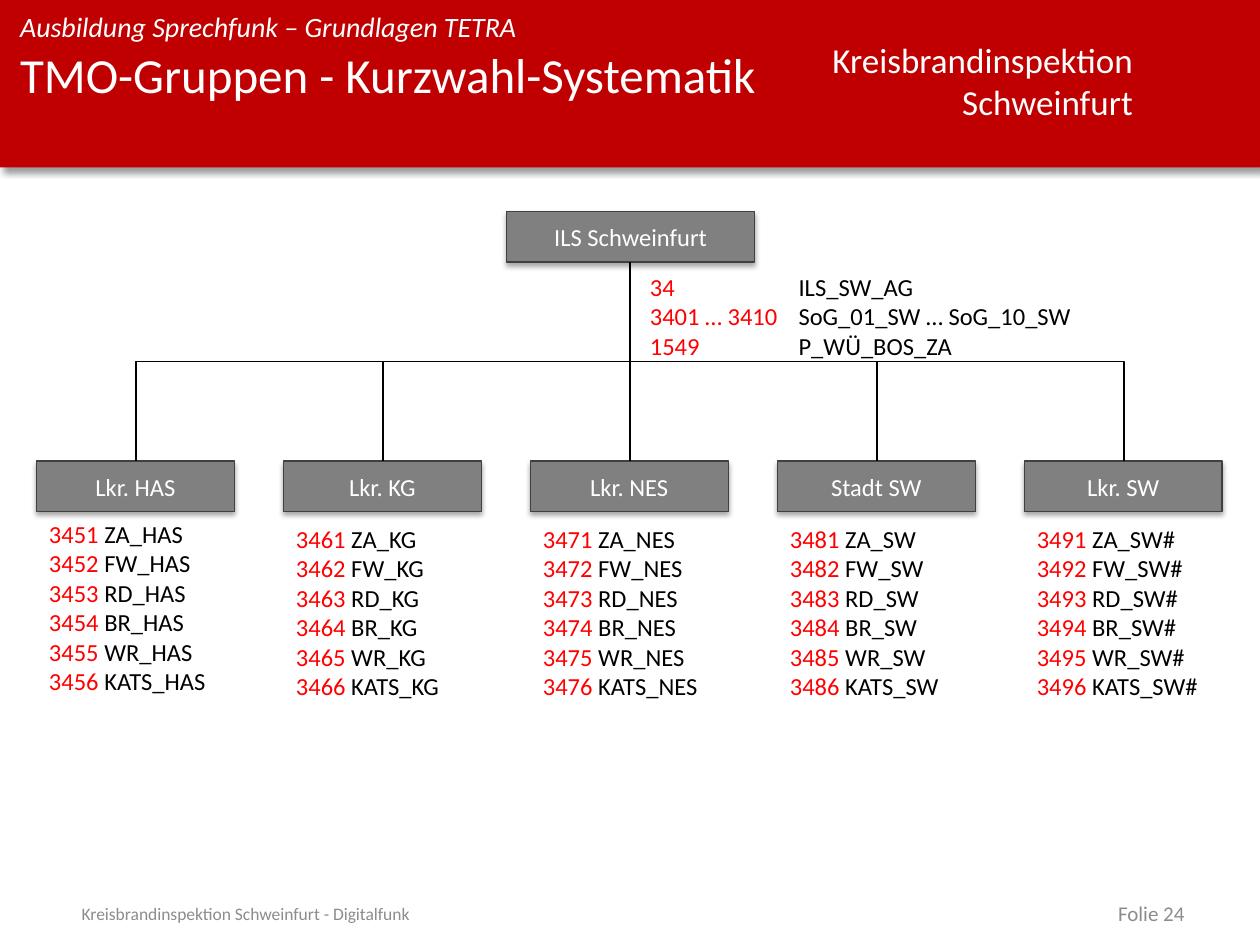
from lxml import etree
from pptx import Presentation
from pptx.dml.color import RGBColor
from pptx.enum.shapes import MSO_CONNECTOR, MSO_SHAPE
from pptx.enum.text import MSO_ANCHOR, MSO_AUTO_SIZE, PP_ALIGN
from pptx.oxml.ns import qn
from pptx.util import Inches, Pt

RED_BAND = RGBColor(0xC0, 0x00, 0x00)
RED = RGBColor(0xFF, 0x00, 0x00)
WHITE = RGBColor(0xFF, 0xFF, 0xFF)
BLACK = RGBColor(0x00, 0x00, 0x00)
BOX_GRAY = RGBColor(0x80, 0x80, 0x80)
EDGE_GRAY = RGBColor(0x40, 0x40, 0x40)
FOOTER_GRAY = RGBColor(0x8C, 0x8C, 0x8C)
LEFT, CENTER, RIGHT = PP_ALIGN.LEFT, PP_ALIGN.CENTER, PP_ALIGN.RIGHT
TOP, MIDDLE = MSO_ANCHOR.TOP, MSO_ANCHOR.MIDDLE
FIT = MSO_AUTO_SIZE.SHAPE_TO_FIT_TEXT
RECTANGLE = MSO_SHAPE.RECTANGLE
ELBOW = MSO_CONNECTOR.ELBOW

prs = Presentation()
prs.slide_width, prs.slide_height = Inches(10), Inches(7.5)
slide = prs.slides.add_slide(prs.slide_layouts[6])


def write(lines, at=None, shape=None, size=14, color=WHITE, align=LEFT, anchor=TOP,
          wrap=True, italic=False, inset=None, tab=None):
    if shape is None:
        shape = slide.shapes.add_textbox(*map(Inches, at))
    frame = shape.text_frame
    frame.word_wrap = wrap
    frame.vertical_anchor = anchor
    if not wrap:
        frame.auto_size = FIT
    if inset is not None:
        frame.margin_left = frame.margin_right = Inches(inset)
        frame.margin_top = frame.margin_bottom = Inches(inset)
    for i, line in enumerate(lines):
        paragraph = frame.paragraphs[0] if i == 0 else frame.add_paragraph()
        paragraph.alignment = align
        if tab:
            tabs = etree.SubElement(paragraph._p.get_or_add_pPr(), qn("a:tabLst"))
            etree.SubElement(tabs, qn("a:tab"), pos=str(Inches(tab)), algn="l")
        for text, run_color in [(line, color)] if isinstance(line, str) else line:
            run = paragraph.add_run()
            run.text = text
            run.font.name = "Calibri"
            run.font.size = Pt(size)
            run.font.italic = italic
            run.font.color.rgb = run_color


def add_box(at, fill, blur, distance, angle, opacity, edge=None):
    box = slide.shapes.add_shape(RECTANGLE, *map(Inches, at))
    box.fill.solid()
    box.fill.fore_color.rgb = fill
    if edge is None:
        box.line.fill.background()
    else:
        box.line.color.rgb = edge
        box.line.width = Pt(0.75)
    box.shadow.inherit = False
    effects = box._element.spPr.find(qn("a:effectLst"))
    shadow = etree.SubElement(effects, qn("a:outerShdw"), blurRad=str(Pt(blur)),
                              dist=str(Pt(distance)), dir=str(angle * 60000),
                              algn="t", rotWithShape="0")
    shade = etree.SubElement(shadow, qn("a:srgbClr"), val="000000")
    etree.SubElement(shade, qn("a:alpha"), val=str(opacity * 1000))
    return box


add_box((0, 0, 10, 1.33), RED_BAND, blur=4, distance=3, angle=45, opacity=40)
write(["Kreisbrandinspektion", "Schweinfurt"], at=(6.48, 0.26, 2.61, 0.77),
      size=20, align=RIGHT, wrap=False)
write(["Ausbildung Sprechfunk – Grundlagen TETRA"], at=(0.16, 0.08, 6.32, 0.27),
      size=16, italic=True, inset=0)
write(["TMO-Gruppen - Kurzwahl-Systematik"], at=(0.16, 0.35, 6.32, 0.99), size=28, inset=0)
write(["Kreisbrandinspektion Schweinfurt - Digitalfunk"], at=(0.55, 7.15, 6.04, 0.2),
      size=10, color=FOOTER_GRAY, anchor=MIDDLE)
write(["Folie 24"], at=(7.17, 7.15, 2.33, 0.2),
      size=12, color=FOOTER_GRAY, align=RIGHT, anchor=MIDDLE)

node_style = dict(fill=BOX_GRAY, blur=3.1, distance=1.8, angle=90, opacity=35, edge=EDGE_GRAY)
control_center = add_box((4.02, 1.68, 1.97, 0.4), **node_style)
write(["ILS Schweinfurt"], shape=control_center, align=CENTER, anchor=MIDDLE)

districts = [
    ("Lkr. HAS", "HAS", 4.07, 1.45),
    ("Lkr. KG", "KG", 4.11, 1.35),
    ("Lkr. NES", "NES", 4.11, 1.45),
    ("Stadt SW", "SW", 4.11, 1.39),
    ("Lkr. SW", "SW#", 4.11, 1.49),
]
services = ["ZA", "FW", "RD", "BR", "WR", "KATS"]
root_x, root_bottom, district_top = 5, 2.08, 3.66
half_drop = (district_top - root_bottom) / 2
middle_y = root_bottom + half_drop

for column, (name, code, list_top, list_width) in enumerate(districts):
    left = 0.29 + 1.96 * column
    district = add_box((left, district_top, 1.57, 0.4), **node_style)
    write([name], shape=district, align=CENTER, anchor=MIDDLE)

    offset = 1.96 * (column - 2)
    side = 1 if offset < 0 else -1
    middle_x = root_x + offset / 2
    half_span = abs(offset) / 2
    branch = slide.shapes.add_connector(
        ELBOW,
        Inches(middle_x + side * half_drop), Inches(middle_y + half_span),
        Inches(middle_x - side * half_drop), Inches(middle_y - half_span))
    branch.line.color.rgb = BLACK
    branch.line.width = Pt(0.75)
    branch_properties = branch._element.spPr
    branch_properties.find(qn("a:xfrm")).set("rot", str((90 if side == 1 else 270) * 60000))
    etree.SubElement(branch_properties, qn("a:effectLst"))

    first_number = 3451 + 10 * column
    write([[(str(first_number + i), RED), (f" {service}_{code}", BLACK)]
           for i, service in enumerate(services)],
          at=(left, list_top, list_width, 1.51), wrap=False)

center_groups = [
    ("34", "ILS_SW_AG"),
    ("3401 … 3410", "SoG_01_SW … SoG_10_SW"),
    ("1549", "P_WÜ_BOS_ZA"),
]
write([[(number, RED), ("\t" + group, BLACK)] for number, group in center_groups],
      at=(5.06, 2.11, 3.57, 0.81), wrap=False, tab=1.18)

prs.save("out.pptx")
